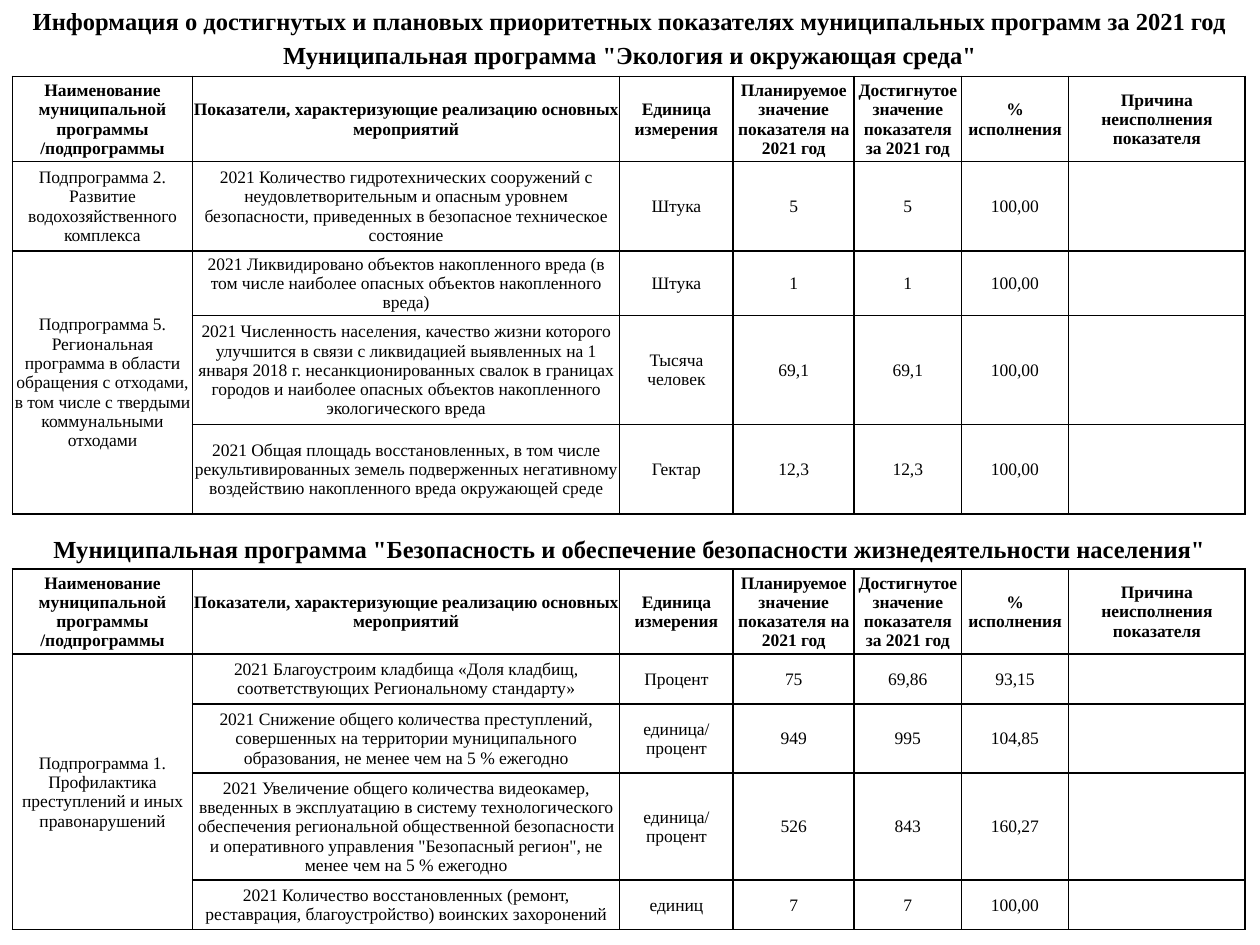
from dataclasses import dataclass

from lxml.etree import SubElement
from pptx import Presentation
from pptx.dml.color import RGBColor
from pptx.enum.text import MSO_ANCHOR as Anchor, PP_ALIGN as Align
from pptx.oxml.ns import qn
from pptx.util import Cm, Pt


@dataclass(frozen=True)
class Theme:
    font: str = "Times New Roman"
    ink: str = "000000"
    title_size: int = 14
    cell_size: int = 10
    border: int = 1


THEME = Theme()
TABLE_LEFT = 0.25
COLUMNS = [3.63, 8.61, 2.29, 2.44, 2.16, 2.16, 3.56]
HEADER = [
    "Наименование муниципальной программы /подпрограммы",
    "Показатели, характеризующие реализацию основных мероприятий",
    "Единица измерения",
    "Планируемое значение показателя на 2021 год",
    "Достигнутое значение показателя за 2021 год",
    "% исполнения",
    "Причина неисполнения показателя",
]

ECOLOGY_HEIGHTS = [1.7, 1.8, 1.3, 2.2, 1.8]
ECOLOGY = [
    ("Подпрограмма 2. Развитие водохозяйственного комплекса", [
        ("2021 Количество гидротехнических сооружений с неудовлетворительным и опасным "
         "уровнем безопасности, приведенных в безопасное техническое состояние",
         "Штука", "5", "5", "100,00"),
    ]),
    ("Подпрограмма 5. Региональная программа в области обращения с отходами, "
     "в том числе с твердыми коммунальными отходами", [
        ("2021 Ликвидировано объектов накопленного вреда (в том числе наиболее опасных "
         "объектов накопленного вреда)",
         "Штука", "1", "1", "100,00"),
        ("2021 Численность населения, качество жизни которого улучшится в связи с "
         "ликвидацией выявленных на 1 января 2018 г. несанкционированных свалок в "
         "границах городов и наиболее опасных объектов накопленного экологического вреда",
         "Тысяча человек", "69,1", "69,1", "100,00"),
        ("2021 Общая площадь восстановленных, в том числе рекультивированных земель "
         "подверженных негативному воздействию накопленного вреда окружающей среде",
         "Гектар", "12,3", "12,3", "100,00"),
    ]),
]

SAFETY_HEIGHTS = [1.7, 1, 1.4, 2.15, 1]
SAFETY = [
    ("Подпрограмма 1. Профилактика преступлений и иных правонарушений", [
        ("2021 Благоустроим кладбища «Доля кладбищ, соответствующих Региональному стандарту»",
         "Процент", "75", "69,86", "93,15"),
        ("2021 Снижение общего количества преступлений, совершенных на территории "
         "муниципального образования, не менее чем на 5 % ежегодно",
         "единица/процент", "949", "995", "104,85"),
        ("2021 Увеличение общего количества видеокамер, введенных в эксплуатацию в систему "
         "технологического обеспечения региональной общественной безопасности и оперативного "
         "управления \"Безопасный регион\", не менее чем на 5 % ежегодно",
         "единица/процент", "526", "843", "160,27"),
        ("2021 Количество восстановленных (ремонт, реставрация, благоустройство) "
         "воинских захоронений",
         "единиц", "7", "7", "100,00"),
    ]),
]


def write(frame, text, size, bold):
    frame.text = text
    para = frame.paragraphs[0]
    para.alignment = Align.CENTER
    para.font.name = THEME.font
    para.font.size = Pt(size)
    para.font.bold = bold
    para.font.color.rgb = RGBColor.from_string(THEME.ink)


def add_title(page, top, text):
    box = page.shapes.add_textbox(Cm(0), Cm(top), Cm(25.4), Cm(0.86))
    box.text_frame.word_wrap = True
    write(box.text_frame, text, THEME.title_size, True)


def add_borders(cell):
    properties = cell._tc.get_or_add_tcPr()
    for side in ("a:lnL", "a:lnR", "a:lnT", "a:lnB"):
        line = SubElement(properties, qn(side), w=str(Pt(THEME.border)))
        fill = SubElement(line, qn("a:solidFill"))
        SubElement(fill, qn("a:srgbClr"), val=THEME.ink)


def fill_cell(cell, text, bold):
    cell.margin_left = cell.margin_right = cell.margin_top = Cm(0.02)
    cell.margin_bottom = Cm(0)
    cell.vertical_anchor = Anchor.MIDDLE
    add_borders(cell)
    cell.fill.background()
    write(cell.text_frame, text, THEME.cell_size, bold)


def add_indicators(page, top, heights, programs):
    frame = page.shapes.add_table(
        len(heights), len(COLUMNS), Cm(TABLE_LEFT), Cm(top), Cm(sum(COLUMNS)), Cm(sum(heights)))
    table = frame.table
    table.first_row = table.horz_banding = False
    for column, width in zip(table.columns, COLUMNS):
        column.width = Cm(width)
    for row, height in zip(table.rows, heights):
        row.height = Cm(height)

    rows = [HEADER]
    for name, indicators in programs:
        first = len(rows)
        for index, indicator in enumerate(indicators):
            rows.append([name if index == 0 else "", *indicator, ""])
        if len(indicators) > 1:
            table.cell(first, 0).merge(table.cell(len(rows) - 1, 0))
    for row_index, texts in enumerate(rows):
        for column_index, text in enumerate(texts):
            fill_cell(table.cell(row_index, column_index), text, row_index == 0)


def main():
    deck = Presentation()
    deck.slide_width, deck.slide_height = Cm(25.4), Cm(19.05)
    page = deck.slides.add_slide(deck.slide_layouts[6])
    add_title(page, 0, "Информация о достигнутых и плановых приоритетных показателях "
                       "муниципальных программ за 2021 год")
    add_title(page, 0.69, "Муниципальная программа \"Экология и окружающая среда\"")
    add_indicators(page, 1.54, ECOLOGY_HEIGHTS, ECOLOGY)
    add_title(page, 10.64, "Муниципальная программа \"Безопасность и обеспечение "
                           "безопасности жизнедеятельности населения\"")
    add_indicators(page, 11.47, SAFETY_HEIGHTS, SAFETY)
    deck.save("out.pptx")


if __name__ == "__main__":
    main()
